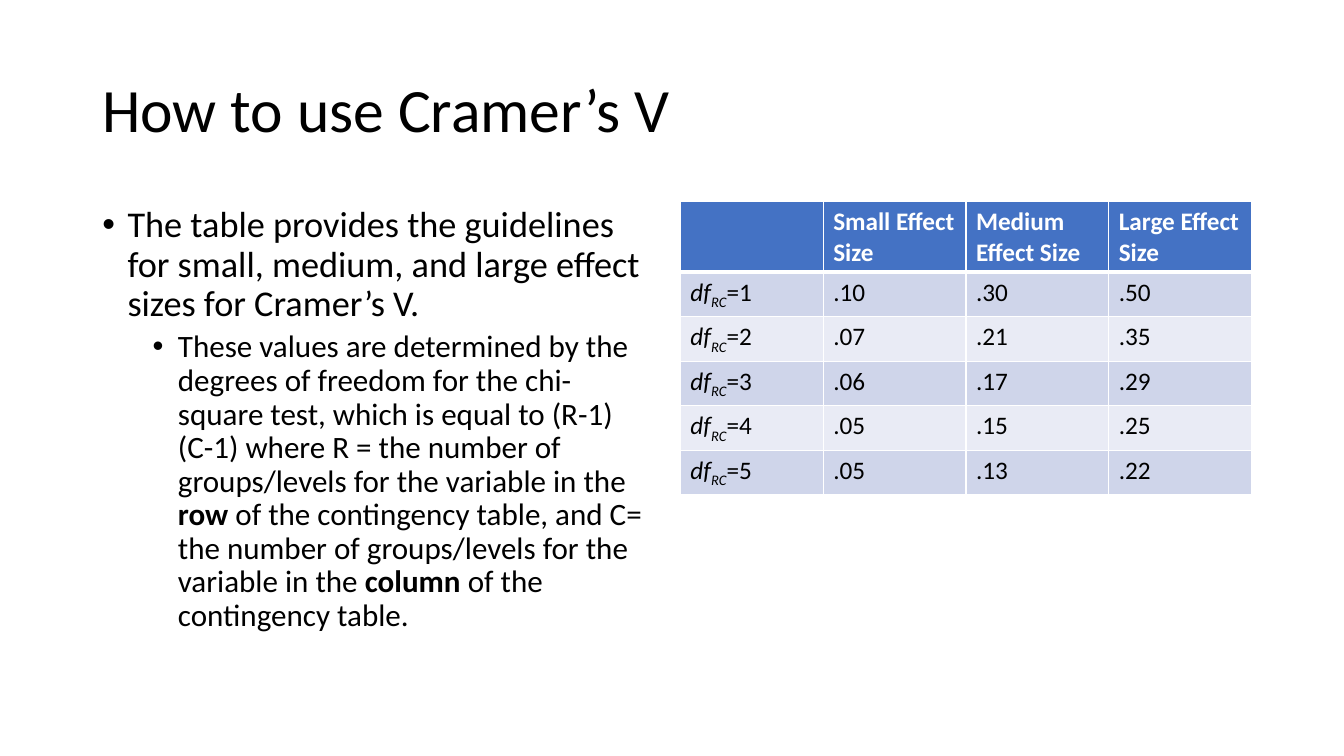
from lxml.etree import SubElement as Sub
from pptx import Presentation
from pptx.dml.color import RGBColor as Rgb
from pptx.enum.text import MSO_ANCHOR as Anchor
from pptx.oxml.ns import qn
from pptx.util import Pt

PX = 9525
FONT = "Calibri"
BLACK, WHITE, BLUE = "000000", "FFFFFF", "4472C4"
BANDS = ["CFD5EA", "E9EBF5"]

TITLE = "How to use Cramer’s V"
POINTS = [
    (24, 25.9, 10, [
        "The table provides the guidelines for small, medium, and large "
        "effect sizes for Cramer’s V."]),
    (72, 22.2, 5, [
        "These values are determined by the degrees of freedom for the "
        "chi-square test, which is equal to (R-1)(C-1) where R = the number "
        "of groups/levels for the variable in the ",
        "row",
        " of the contingency table, and C= the number of groups/levels for "
        "the variable in the ",
        "column",
        " of the contingency table."]),
]
HEADS = ["", "Small Effect Size", "Medium Effect Size", "Large Effect Size"]
SIZES = [
    [".10", ".30", ".50"],
    [".07", ".21", ".35"],
    [".06", ".17", ".29"],
    [".05", ".15", ".25"],
    [".05", ".13", ".22"],
]


def px(*nums):
    return [n * PX for n in nums]


def color(hue):
    return Rgb.from_string(hue)


def style(run, size, hue=BLACK, bold=False, slant=False):
    font = run.font
    font.name, font.size = FONT, Pt(size)
    font.bold, font.italic = bold, slant
    font.color.rgb = color(hue)


def add_text(slide, box):
    frame = slide.shapes.add_textbox(*px(*box)).text_frame
    frame.word_wrap = True
    return frame


def add_title(slide, box):
    frame = add_text(slide, box)
    frame.vertical_anchor = Anchor.MIDDLE
    frame.text = TITLE
    para = frame.paragraphs[0]
    para.line_spacing = 0.9
    style(para.runs[0], 44)


def add_points(slide, box):
    frame = add_text(slide, box)
    for level, (left, size, gap, parts) in enumerate(POINTS):
        para = frame.add_paragraph() if level else frame.paragraphs[0]
        para.level = level
        para.line_spacing = 0.9
        para.space_before = Pt(gap)
        props = para._p.get_or_add_pPr()
        props.set("marL", str(left * PX))
        props.set("indent", str(-24 * PX))
        Sub(props, qn("a:buFont"), typeface="Arial")
        Sub(props, qn("a:buChar"), char="•")
        for spot, part in enumerate(parts):
            run = para.add_run()
            run.text = part
            style(run, size, bold=spot % 2 == 1)


def paint(cell, hue, top, base):
    props = cell._tc.get_or_add_tcPr()
    for side, width in zip("LRTB", [1, 1, top, base]):
        line = Sub(props, qn(f"a:ln{side}"), w=str(Pt(width)))
        fill = Sub(line, qn("a:solidFill"))
        Sub(fill, qn("a:srgbClr"), val=WHITE)
    cell.fill.solid()
    cell.fill.fore_color.rgb = color(hue)


def add_label(cell, num):
    para = cell.text_frame.paragraphs[0]
    for part in ["df", "RC", f"={num}"]:
        run = para.add_run()
        run.text = part
        style(run, 18, slant=part in ("df", "RC"))
        if part == "RC":
            run.font._element.set("baseline", "-25000")


def add_grid(slide, box, head=67, step=42):
    left, top, width = box
    high = head + step * len(SIZES)
    frame = slide.shapes.add_table(
        len(SIZES) + 1, len(HEADS), *px(left, top, width, high))
    table = frame.table
    for col in table.columns:
        col.width = width * PX // len(HEADS)
    for row, words in enumerate([HEADS] + [[""] + vals for vals in SIZES]):
        table.rows[row].height = (step if row else head) * PX
        for col, word in enumerate(words):
            cell = table.cell(row, col)
            hue = BANDS[(row - 1) % 2] if row else BLUE
            paint(cell, hue, 3 if row == 1 else 1, 1 if row else 3)
            if row and not col:
                add_label(cell, row)
            elif word:
                cell.text = word
                run = cell.text_frame.paragraphs[0].runs[0]
                style(run, 18, BLACK if row else WHITE, bold=not row)


def main():
    deck = Presentation()
    deck.slide_width, deck.slide_height = px(1280, 720)
    slide = deck.slides.add_slide(deck.slide_layouts[6])
    add_title(slide, (88, 38, 1104, 139))
    add_points(slide, (88, 192, 544, 457))
    add_grid(slide, (648, 192, 544))
    deck.save("out.pptx")


if __name__ == "__main__":
    main()
